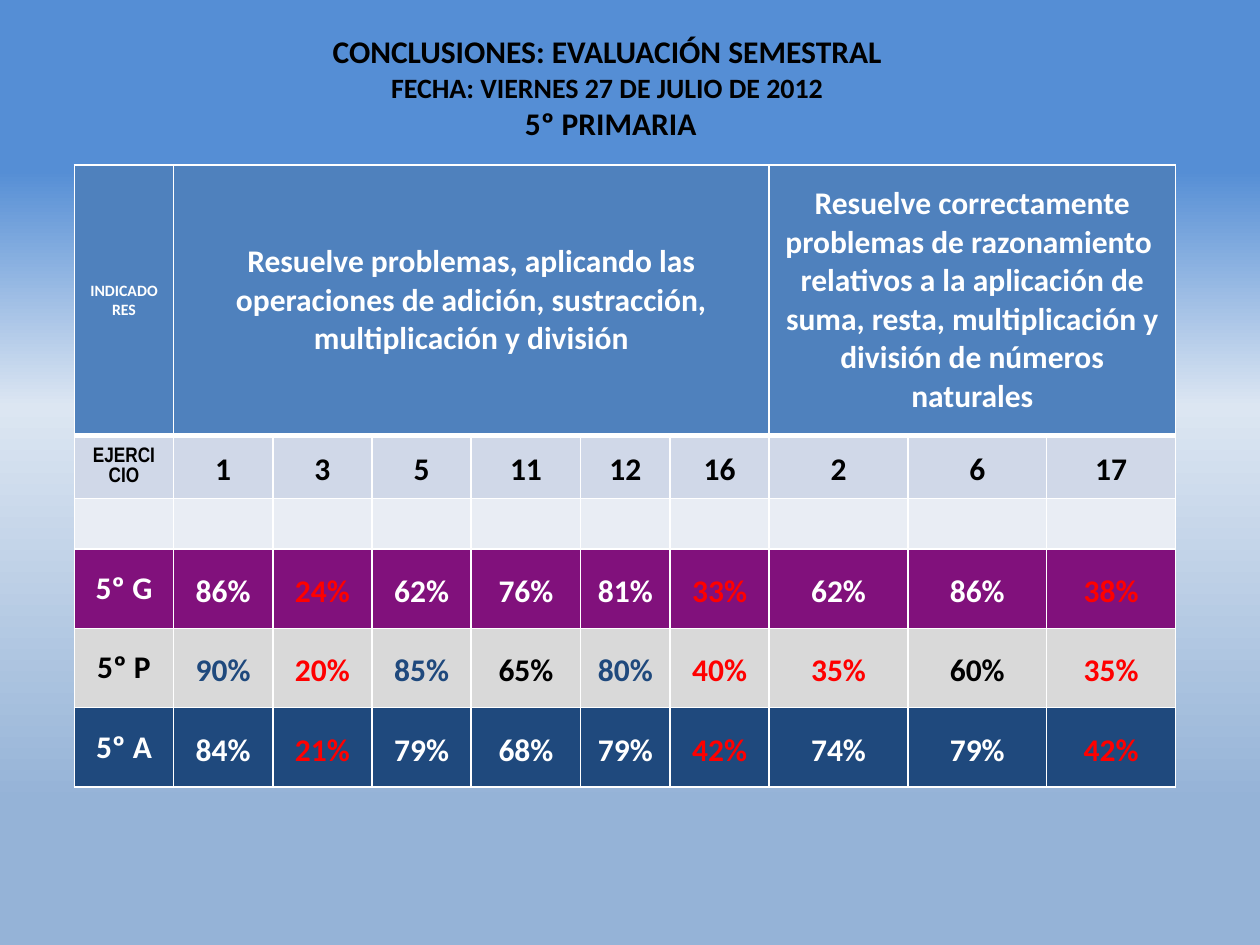
from lxml.etree import SubElement
from pptx import Presentation
from pptx.dml.color import RGBColor
from pptx.enum.text import MSO_ANCHOR, PP_ALIGN
from pptx.oxml.ns import qn
from pptx.util import Pt

COLORS = {
    "white": "FFFFFF", "black": "000000", "red": "FF0000", "navy": "1F497D",
    "header": "4F81BD", "band": "D0D8E8", "light": "E9EDF4",
    "purple": "81117C", "gray": "D9D9D9",
}
BACKGROUND_STOPS = [(15, "95B3D7"), (57, "DCE6F2"), (82, "558ED5")]

COLUMN_WIDTHS = [56.7, 56.7, 56.7, 56.7, 62.6, 51, 56.7, 79.3, 79.3, 73.6]
ROW_HEIGHTS = [154.5, 32.4, 28.4, 45.4, 45.4, 45.4]
EXERCISES = [1, 3, 5, 11, 12, 16, 2, 6, 17]
# Group name, row fill, text colour, colour of high scores, scores
GROUPS = [
    ("5º G", "purple", "white", "white", [86, 24, 62, 76, 81, 33, 62, 86, 38]),
    ("5º P", "gray", "black", "navy", [90, 20, 85, 65, 80, 40, 35, 60, 35]),
    ("5º A", "navy", "white", "white", [84, 21, 79, 68, 79, 42, 74, 79, 42]),
]
LOW_SCORE, HIGH_SCORE = 50, 80


def write_text(para, text, size=18, color="black", font="Calibri", spacing=None):
    para.alignment = PP_ALIGN.CENTER
    if spacing:
        para.line_spacing = spacing
    span = para.add_run()
    span.text = text
    span.font.size = Pt(size)
    span.font.name = font
    span.font.bold = True
    span.font.color.rgb = RGBColor.from_string(COLORS[color])


def paint_background(page):
    fill = page.background.fill
    fill.gradient()
    fill.gradient_angle = 90
    stops = next(page.element.iter(qn("a:gsLst")))
    for stop in list(stops):
        stops.remove(stop)
    for position, color in BACKGROUND_STOPS:
        stop = SubElement(stops, qn("a:gs"), pos=str(position * 1000))
        SubElement(stop, qn("a:srgbClr"), val=color)


def add_title(page):
    box = page.shapes.add_textbox(Pt(167), Pt(15), Pt(360), Pt(72.7))
    frame = box.text_frame
    frame.word_wrap = True
    lines = [("CONCLUSIONES: EVALUACIÓN SEMESTRAL", 18),
             ("FECHA: VIERNES 27 DE JULIO DE 2012", 16),
             (" 5º PRIMARIA", 18)]
    for index, (text, size) in enumerate(lines):
        para = frame.add_paragraph() if index else frame.paragraphs[0]
        write_text(para, text, size=size)


def style_cell(cell, fill, top=1, bottom=1):
    properties = cell._tc.get_or_add_tcPr()
    for side, width in (("L", 1), ("R", 1), ("T", top), ("B", bottom)):
        line = SubElement(properties, qn(f"a:ln{side}"), w=str(Pt(width)))
        solid = SubElement(line, qn("a:solidFill"))
        SubElement(solid, qn("a:srgbClr"), val=COLORS["white"])
    cell.fill.solid()
    cell.fill.fore_color.rgb = RGBColor.from_string(COLORS[fill])
    cell.vertical_anchor = MSO_ANCHOR.MIDDLE


def write_value(cell, text, color="black"):
    cell.margin_left = cell.margin_right = Pt(5)
    cell.margin_top = cell.margin_bottom = 0
    write_text(cell.text_frame.paragraphs[0], text, color=color, spacing=1.15)


def score_color(score, normal, high):
    if score < LOW_SCORE:
        return "red"
    return high if score >= HIGH_SCORE else normal


def add_results_table(page):
    table = page.shapes.add_table(
        len(ROW_HEIGHTS), len(COLUMN_WIDTHS), Pt(42.5), Pt(94.3),
        Pt(sum(COLUMN_WIDTHS)), Pt(sum(ROW_HEIGHTS))).table
    for column, width in zip(table.columns, COLUMN_WIDTHS):
        column.width = Pt(width)
    for row, height in zip(table.rows, ROW_HEIGHTS):
        row.height = Pt(height)

    # Fills and borders, with a heavy rule under the header
    fills = ["header", "band", "light"] + [group[1] for group in GROUPS]
    for index, (row, fill) in enumerate(zip(table.rows, fills)):
        for cell in row.cells:
            style_cell(cell, fill, top=3 if index == 1 else 1,
                       bottom=3 if index == 0 else 1)

    # Header row
    headers = [
        (0, 0, "INDICADORES", 9),
        (1, 6, "Resuelve problemas, aplicando las operaciones de adición, "
               "sustracción, multiplicación y división", 18),
        (7, 9, "Resuelve correctamente problemas de razonamiento  relativos a la "
               "aplicación de suma, resta, multiplicación y división de números "
               "naturales", 18),
    ]
    for first, last, text, size in headers:
        cell = table.cell(0, first)
        if last > first:
            cell.merge(table.cell(0, last))
        write_text(cell.text_frame.paragraphs[0], text, size=size, color="white")
    table.cell(0, 0)._tc.get_or_add_tcPr().set("vert", "wordArtVert")

    # Exercise numbers
    write_text(table.cell(1, 0).text_frame.paragraphs[0], "EJERCICIO",
               size=12, font="Arial Narrow")
    for column, number in enumerate(EXERCISES, start=1):
        write_value(table.cell(1, column), str(number))

    # Scores of each group
    for row, (name, _, normal, high, scores) in enumerate(GROUPS, start=3):
        write_text(table.cell(row, 0).text_frame.paragraphs[0], name, color=normal)
        for column, score in enumerate(scores, start=1):
            write_value(table.cell(row, column), f"{score}%",
                        color=score_color(score, normal, high))


def main():
    deck = Presentation()
    deck.slide_width, deck.slide_height = Pt(720), Pt(540)
    page = deck.slides.add_slide(deck.slide_layouts[6])
    paint_background(page)
    add_title(page)
    add_results_table(page)
    deck.save("out.pptx")


if __name__ == "__main__":
    main()
